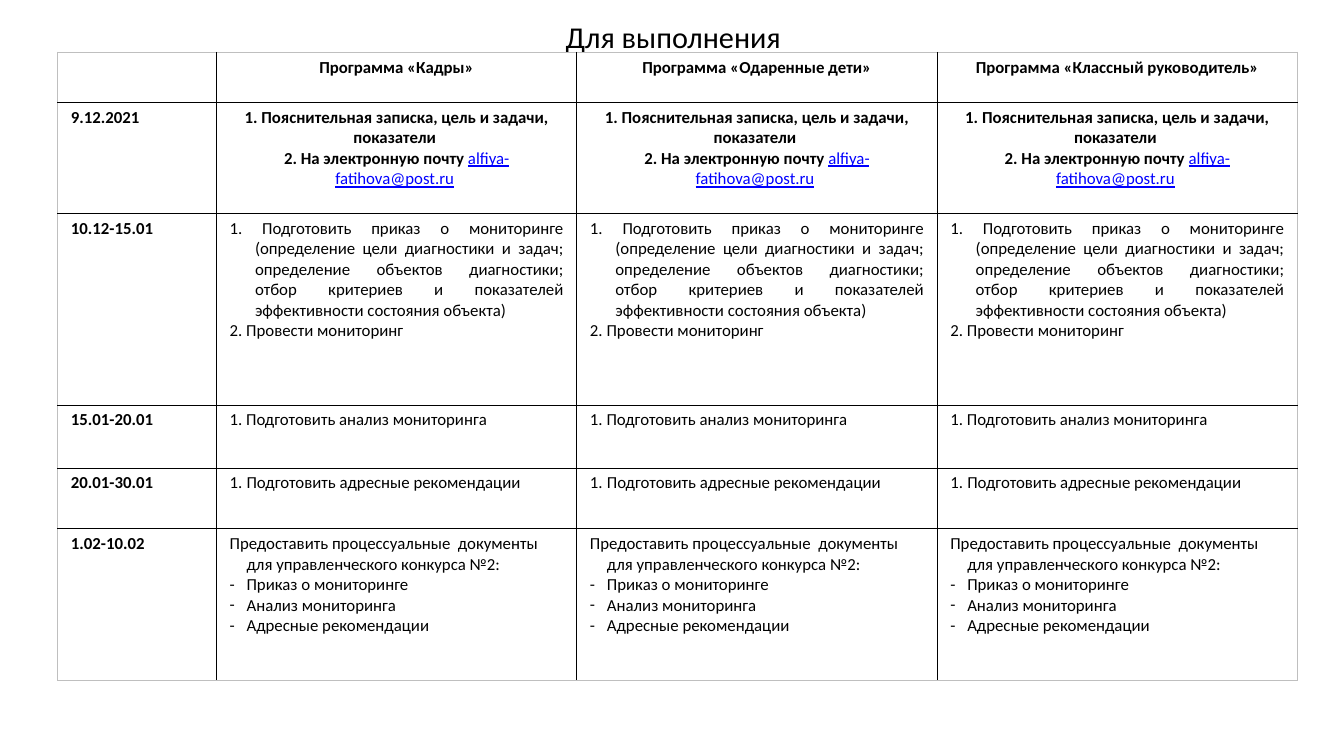
from lxml.etree import SubElement
from pptx import Presentation
from pptx.dml.color import RGBColor
from pptx.enum.text import MSO_ANCHOR, MSO_AUTO_SIZE, PP_ALIGN
from pptx.oxml.ns import qn
from pptx.util import Cm, Pt

BLACK = RGBColor(0x00, 0x00, 0x00)
WHITE = RGBColor(0xFF, 0xFF, 0xFF)
LINK_BLUE = RGBColor(0x00, 0x00, 0xFF)
EDGE_GREY = RGBColor(0xBF, 0xBF, 0xBF)

TITLE_BOX = (2.59, 0.79, 45.72, 1.19)
SCHEDULE_BOX = (2.18, 1.98, 46.86, 23.75)
PERIOD_WIDTH = 6
ROW_HEIGHTS = [1.9, 4.19, 7.24, 2.39, 2.29, 5.74]
CELL_MARGINS = {
    "margin_left": Cm(0.5), "margin_right": Cm(0.5),
    "margin_top": Cm(0.18), "margin_bottom": Cm(0.18),
}

PLAIN = {"name": "Calibri", "size": Pt(18), "bold": False}
BOLD = {**PLAIN, "bold": True}
LINK = {**PLAIN, "underline": True}
TITLE_FONT = {**PLAIN, "size": Pt(32.4)}

PROGRAMS = ["Кадры", "Одаренные дети", "Классный руководитель"]


def paragraph(*runs, align=PP_ALIGN.LEFT, hang=0, bullet=None):
    """Describe a paragraph; each run is (text, font) or (text, font, colour)."""
    return {"runs": runs, "align": align, "hang": hang, "bullet": bullet}


def centred(*runs):
    return paragraph(*runs, align=PP_ALIGN.CENTER)


def hanging(text, bullet=None):
    return paragraph((text, PLAIN), hang=0.64, bullet=bullet)


# Each period has the same tasks for every program.
TASKS = {
    "9.12.2021": [
        centred(("1. Пояснительная записка, цель и задачи, показатели ", BOLD)),
        centred(("2. На электронную почту ", BOLD),
                ("alfiya-fatihova@post.ru", LINK, LINK_BLUE), (" ", PLAIN)),
    ],
    "10.12-15.01": [
        paragraph(("1. Подготовить приказ о мониторинге (определение цели "
                   "диагностики и задач; определение объектов диагностики; "
                   "отбор критериев и показателей эффективности состояния "
                   "объекта)", PLAIN), align=PP_ALIGN.JUSTIFY, hang=0.96),
        paragraph(("2. Провести мониторинг", PLAIN), hang=0.96),
    ],
    "15.01-20.01": [paragraph(("1. Подготовить анализ мониторинга", PLAIN))],
    "20.01-30.01": [hanging("Подготовить адресные рекомендации", "1.")],
    "1.02-10.02": [
        hanging("Предоставить процессуальные  документы для управленческого "
                "конкурса №2:"),
        hanging("Приказ о мониторинге", "-"),
        hanging("Анализ мониторинга", "-"),
        hanging("Адресные рекомендации", "-"),
    ],
}


def apply(target, settings):
    for attribute, value in settings.items():
        setattr(target, attribute, value)


def add_run(line, text, font, colour=BLACK):
    run = line.add_run()
    run.text = text
    apply(run.font, font)
    run.font.color.rgb = colour


def set_list_format(line, hang, bullet):
    properties = line._p.get_or_add_pPr()
    properties.set("marL", str(Cm(hang)))
    properties.set("indent", str(-Cm(hang)))
    if bullet == "1.":
        SubElement(properties, qn("a:buFont"), typeface="+mj-lt")
        SubElement(properties, qn("a:buAutoNum"), type="arabicPeriod")
    elif bullet:
        SubElement(properties, qn("a:buFont"), typeface="Calibri")
        SubElement(properties, qn("a:buChar"), char=bullet)


def write(frame, paragraphs):
    for number, content in enumerate(paragraphs):
        line = frame.add_paragraph() if number else frame.paragraphs[0]
        line.alignment = content["align"]
        if content["hang"]:
            set_list_format(line, content["hang"], content["bullet"])
        for run in content["runs"]:
            add_run(line, *run)


def set_borders(cell, outer_sides):
    properties = cell._tc.get_or_add_tcPr()
    for side in "LRTB":
        colour = EDGE_GREY if side in outer_sides else BLACK
        border = SubElement(properties, qn(f"a:ln{side}"), w=str(Pt(1)))
        fill = SubElement(border, qn("a:solidFill"))
        SubElement(fill, qn("a:srgbClr"), val=str(colour))


def place_title(slide, left, top, width, height):
    title = slide.shapes.title
    apply(title, {"left": Cm(left), "top": Cm(top),
                  "width": Cm(width), "height": Cm(height)})
    apply(title.text_frame, {"vertical_anchor": MSO_ANCHOR.MIDDLE,
                             "auto_size": MSO_AUTO_SIZE.NONE,
                             "word_wrap": True})
    write(title.text_frame, [centred(("Для выполнения", TITLE_FONT))])


def add_schedule(slide, left, top, width, height):
    header = [[]] + [[centred((f"Программа «{name}»", BOLD))] for name in PROGRAMS]
    rows = [header] + [
        [[paragraph((period, BOLD))]] + [tasks] * len(PROGRAMS)
        for period, tasks in TASKS.items()
    ]
    table = slide.shapes.add_table(
        len(rows), len(header), Cm(left), Cm(top), Cm(width), Cm(height)).table
    apply(table, {"first_row": False, "horz_banding": False})
    program_width = (width - PERIOD_WIDTH) / len(PROGRAMS)
    for index, column in enumerate(table.columns):
        column.width = Cm(program_width if index else PERIOD_WIDTH)
    for row, row_height in zip(table.rows, ROW_HEIGHTS):
        row.height = Cm(row_height)

    last_row, last_column = len(rows) - 1, len(header) - 1
    for r, row in enumerate(rows):
        for c, paragraphs in enumerate(row):
            cell = table.cell(r, c)
            edges = {"L": c == 0, "R": c == last_column,
                     "T": r == 0, "B": r == last_row}
            set_borders(cell, [side for side in edges if edges[side]])
            cell.fill.solid()
            cell.fill.fore_color.rgb = WHITE
            apply(cell, CELL_MARGINS)
            write(cell.text_frame, paragraphs)


def main():
    presentation = Presentation()
    apply(presentation, {"slide_width": Cm(50.8), "slide_height": Cm(28.58)})
    slide = presentation.slides.add_slide(presentation.slide_layouts[5])
    place_title(slide, *TITLE_BOX)
    add_schedule(slide, *SCHEDULE_BOX)
    presentation.save("out.pptx")


if __name__ == "__main__":
    main()
